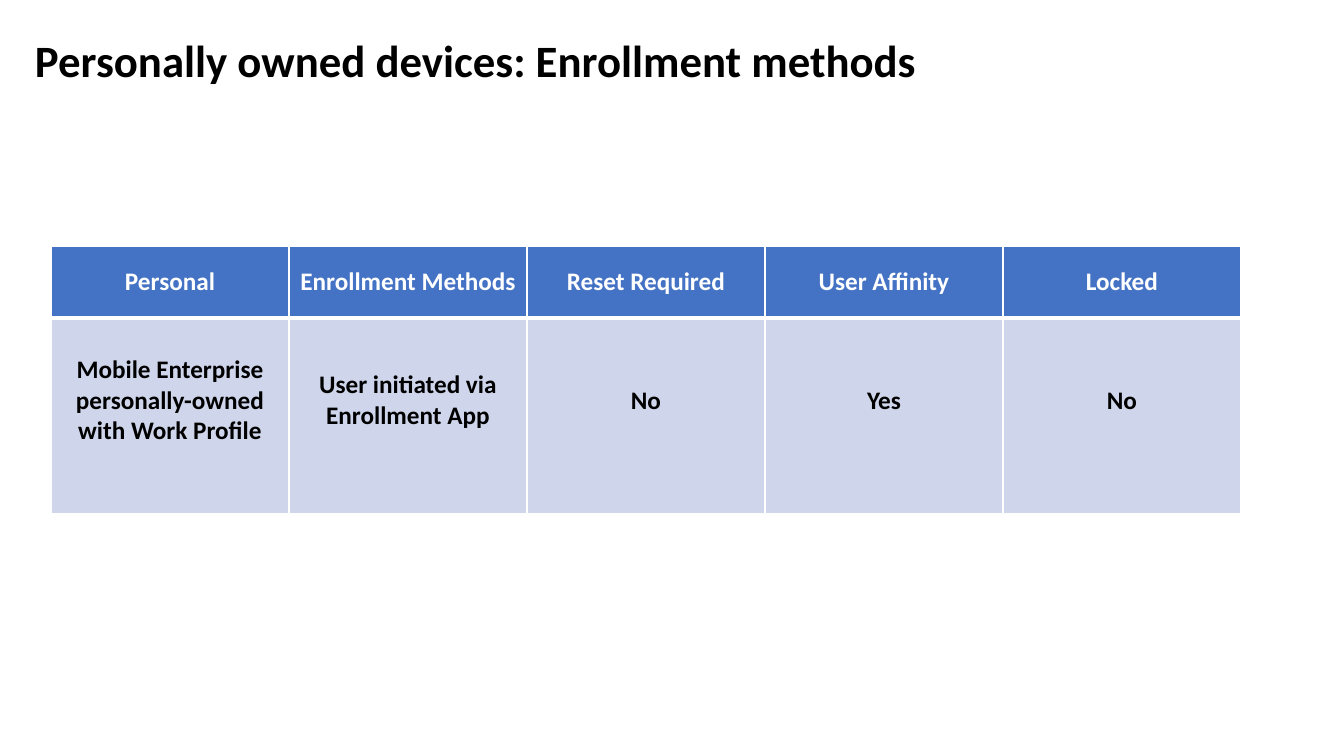
from lxml.etree import SubElement
from pptx import Presentation
from pptx.dml.color import RGBColor
from pptx.enum.text import MSO_ANCHOR, PP_ALIGN
from pptx.oxml.ns import qn
from pptx.util import Pt

PX = 914400 / 100.8
FONT = "Calibri"
WHITE = RGBColor(0xFF, 0xFF, 0xFF)
BLACK = RGBColor(0, 0, 0)
HEADER_BLUE = RGBColor(0x44, 0x72, 0xC4)
BODY_BLUE = RGBColor(0xCF, 0xD5, 0xEA)

HEADERS = ["Personal", "Enrollment Methods", "Reset Required", "User Affinity", "Locked"]
METHOD = ["Mobile Enterprise personally-owned with Work Profile",
          "User initiated via Enrollment App", "No", "Yes", "No"]


def px(length):
    return round(length * PX)


def add_bold_run(paragraph, text, size, color):
    run = paragraph.add_run()
    run.text = text
    run.font.name = FONT
    run.font.size = Pt(size)
    run.font.bold = True
    run.font.color.rgb = color


def set_borders(cell, top, bottom):
    """Draw white cell borders; the side borders are 1 pt wide."""
    properties = cell._tc.get_or_add_tcPr()
    sides = [("lnL", 1), ("lnR", 1), ("lnT", top), ("lnB", bottom)]
    for index, (side, width) in enumerate(sides):
        line = SubElement(properties, qn(f"a:{side}"), w=str(Pt(width)))
        fill = SubElement(line, qn("a:solidFill"))
        SubElement(fill, qn("a:srgbClr"), val=str(WHITE))
        properties.insert(index, line)  # borders come before the fill


def add_title(slide, left, top, width, height):
    box = slide.shapes.add_textbox(px(left), px(top), px(width), px(height))
    frame = box.text_frame
    frame.word_wrap = True
    frame.margin_left = frame.margin_right = frame.margin_bottom = 0
    frame.margin_top = px(18)
    paragraph = frame.paragraphs[0]
    paragraph.line_spacing = 0.9
    add_bold_run(paragraph, "Personally owned devices: Enrollment methods", 32, BLACK)


def add_methods_table(slide, left, top, width, height):
    header_height = 72
    # Text, row height, fill, text colour, bottom margin, top and bottom border
    rows = [(HEADERS, header_height, HEADER_BLUE, WHITE, 5, 1, 3),
            (METHOD, height - header_height, BODY_BLUE, BLACK, 36, 3, 1)]
    table = slide.shapes.add_table(len(rows), len(HEADERS), px(left), px(top),
                                   px(width), px(height)).table
    for column in table.columns:
        column.width = px(width / len(HEADERS))
    for row, (texts, row_height, fill, color, margin, upper, lower) in zip(table.rows, rows):
        row.height = px(row_height)
        for cell, text in zip(row.cells, texts):
            cell.fill.solid()
            cell.fill.fore_color.rgb = fill
            cell.vertical_anchor = MSO_ANCHOR.MIDDLE
            cell.margin_bottom = px(margin)
            set_borders(cell, upper, lower)
            paragraph = cell.text_frame.paragraphs[0]
            paragraph.alignment = PP_ALIGN.CENTER
            add_bold_run(paragraph, text, 18, color)


def main():
    presentation = Presentation()
    presentation.slide_width = px(1344)
    presentation.slide_height = px(756)
    slide = presentation.slides.add_slide(presentation.slide_layouts[6])
    add_methods_table(slide, 51, 246, 1190, 268)
    add_title(slide, 35, 21, 1250, 84)
    presentation.save("out.pptx")


if __name__ == "__main__":
    main()
